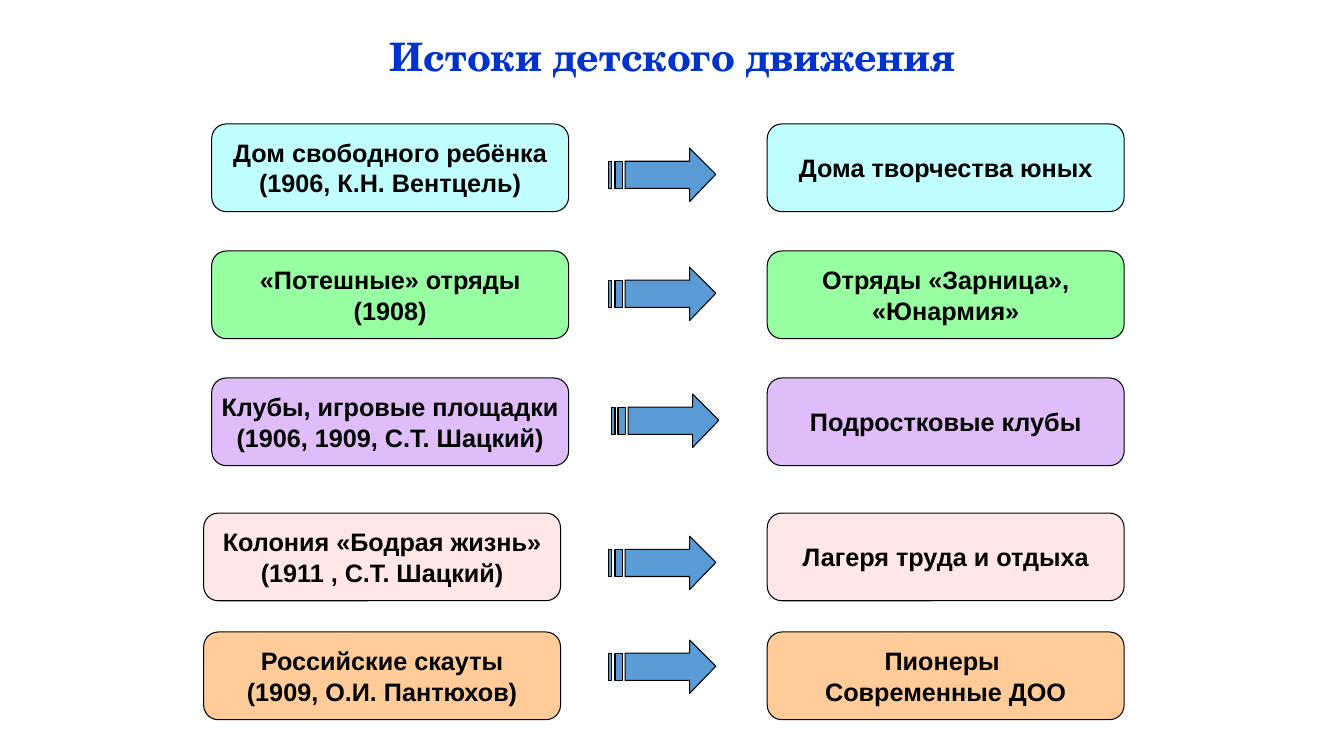
from pptx import Presentation
from pptx.dml.color import RGBColor
from pptx.enum.shapes import MSO_SHAPE as SHAPE
from pptx.enum.text import MSO_ANCHOR as ANCHOR, PP_ALIGN as ALIGN
from pptx.util import Inches, Pt

BOX_W, BOX_H = 3.54, 0.87
RIGHT_X = 7.61
ARROW_RISE = 0.53
HUNDREDTH = Inches(0.01)

ARROW_BODY = [(80, 0), (80, 13), (16, 13), (16, 40), (80, 40), (80, 53), (106.5, 26.5)]
STRIPES = [(6, 13), (0, 3)]

ROWS = [
    (1.23, 2.1, 6.04, 1.47, "C1FFFF",
     ["Дом свободного ребёнка", "(1906, К.Н. Вентцель)"],
     ["Дома творчества юных"]),
    (2.49, 2.1, 6.04, 2.65, "98FEA2",
     ["«Потешные» отряды", "(1908)"],
     ["Отряды «Зарница»,", "«Юнармия»"]),
    (3.75, 2.1, 6.07, 3.91, "DEBDF9",
     ["Клубы, игровые площадки", "(1906, 1909, С.Т. Шацкий)"],
     ["Подростковые клубы"]),
    (5.09, 2.02, 6.04, 5.32, "FFE7E7",
     ["Колония «Бодрая жизнь»", "(1911 , С.Т. Шацкий)"],
     ["Лагеря труда и отдыха"]),
    (6.27, 2.02, 6.04, 6.35, "FFCC99",
     ["Российские скауты", "(1909, О.И. Пантюхов)"],
     ["Пионеры ", "Современные ДОО"]),
]


def rgb(value):
    return RGBColor.from_string(value)


def paint(sp, fill):
    sp.shadow.inherit = False
    sp.fill.solid()
    sp.fill.fore_color.rgb = rgb(fill)
    sp.line.color.rgb = rgb("000000")
    sp.line.width = Pt(0.75)


def add_run(p, text, size, font, color):
    p.alignment = ALIGN.CENTER
    r = p.add_run()
    r.text = text
    r.font.size = Pt(size)
    r.font.name = font
    r.font.bold = True
    r.font.color.rgb = rgb(color)


def set_title(s, text):
    sp = s.shapes.title
    sp.left, sp.top, sp.width, sp.height = map(Inches, (2.17, 0.3, 9, 0.57))
    tf = sp.text_frame
    tf.vertical_anchor = ANCHOR.MIDDLE
    p = tf.paragraphs[0]
    p.line_spacing = 0.9
    add_run(p, text, 28, "TeX Gyre Schola", "0033CC")


def add_box(s, x, y, fill, lines):
    sp = s.shapes.add_shape(SHAPE.ROUNDED_RECTANGLE, *map(Inches, (x, y, BOX_W, BOX_H)))
    paint(sp, fill)
    tf = sp.text_frame
    tf.word_wrap = False
    tf.vertical_anchor = ANCHOR.MIDDLE
    for i, line in enumerate(lines):
        p = tf.add_paragraph() if i else tf.paragraphs[0]
        add_run(p, line, 18, "Arial", "000000")


def add_striped_arrow(s, x, y):
    builder = s.shapes.build_freeform(*ARROW_BODY[0], scale=HUNDREDTH)
    builder.add_line_segments(ARROW_BODY[1:], close=True)
    for left, right in STRIPES:
        builder.move_to(left, 13)
        builder.add_line_segments([(left, 40), (right, 40), (right, 13)], close=True)
    paint(builder.convert_to_shape(Inches(x), Inches(y)), "5B9BD5")


def main():
    prs = Presentation()
    prs.slide_width, prs.slide_height = Inches(13.33), Inches(7.5)
    s = prs.slides.add_slide(prs.slide_layouts[5])
    set_title(s, "Истоки детского движения")
    for y, left_x, arrow_x, arrow_y, fill, origin, successor in ROWS:
        add_box(s, left_x, y, fill, origin)
        add_striped_arrow(s, arrow_x, arrow_y)
        add_box(s, RIGHT_X, y, fill, successor)
    prs.save("out.pptx")


if __name__ == "__main__":
    main()
